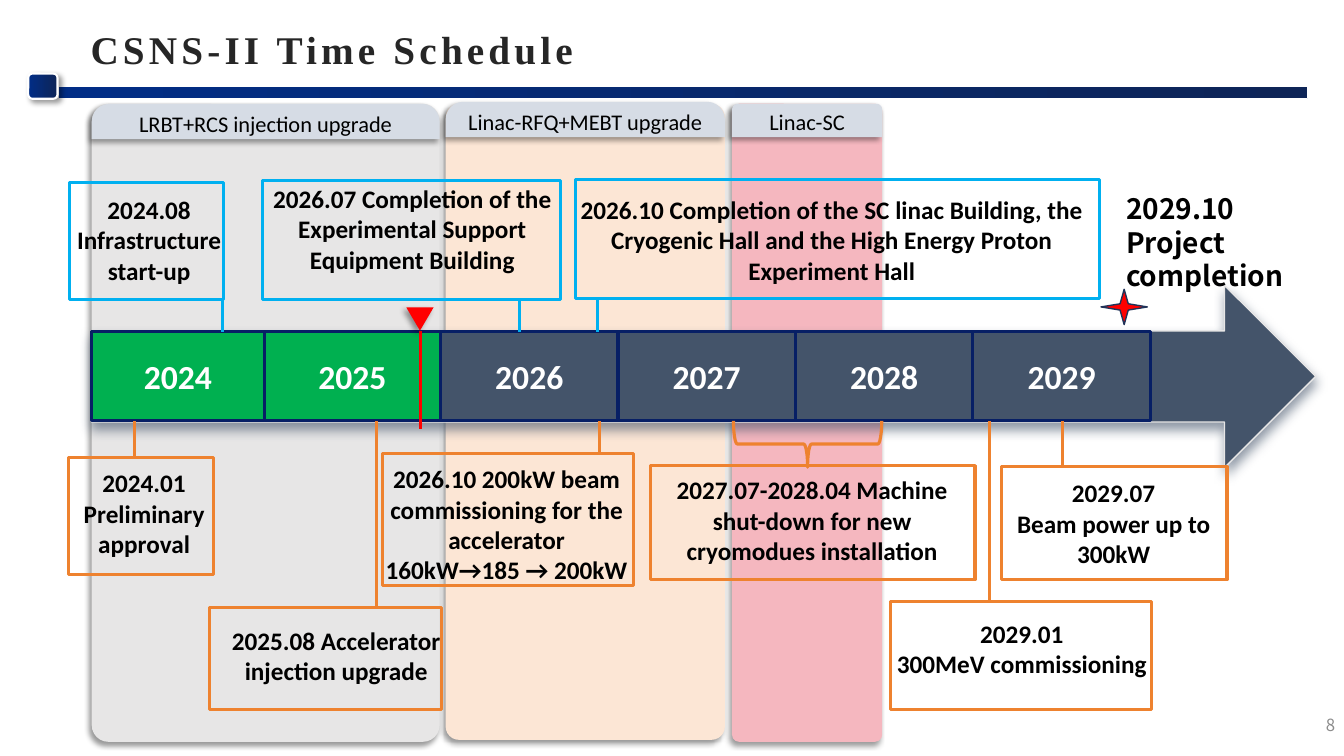
from itertools import pairwise

from lxml.etree import SubElement
from pptx import Presentation
from pptx.dml.color import RGBColor
from pptx.enum.shapes import MSO_CONNECTOR, MSO_SHAPE as SHAPE
from pptx.enum.text import MSO_ANCHOR as ANCHOR, PP_ALIGN as ALIGN
from pptx.oxml.ns import qn
from pptx.util import Pt

PX = 9144  # 100 px to the inch
COLORS = {
    "white": "FFFFFF", "black": "000000", "red": "FF0000", "title": "262626",
    "number": "8C8C8C", "bar_start": "012D86", "bar_end": "0E2557",
    "gray_band": "E7E6E6", "peach_band": "FCE6D5", "pink_band": "F5B7BF",
    "header": "D6DCE5", "slate": "44546A", "done": "00B050", "navy": "071F65",
    "star_edge": "203359", "building": "00B0F0", "machine": "EE822F",
}
SANS, CJK, SERIF = "Calibri", "Noto Sans CJK SC", "Times New Roman"
TIMELINE_TOP, TIMELINE_BOTTOM = 329, 417
YEAR_EDGES = [91, 262, *range(437, 1142, 176)]
FIRST_YEAR, YEARS_DONE = 2024, 2

BANDS = [  # box, fill, header top, header height, header rounding, label
    ((726, 103, 149, 633), "pink_band", 103, 33, 0.172, "Linac-SC"),
    ((442, 103, 277, 631), "peach_band", 101, 35, 0.5, "Linac-RFQ+MEBT upgrade"),
    ((91, 103, 345, 633), "gray_band", 103, 35, 0.5, "LRBT+RCS injection upgrade"),
]
MILESTONES = [  # colour, box, caption (dx, dy, width), lead dx, lines
    ("building", (69, 181, 153, 116), (-18, 7, 194), 152,
     ["2024.08", "Infrastructure start-up"]),
    ("building", (260, 179, 296, 118), (-9, -2, 316), 255,
     ["2026.07 Completion of the Experimental Support Equipment Building"]),
    ("building", (571, 178, 520, 118), (-13, 10, 534), 22,
     ["2026.10 Completion of the SC linac Building, the Cryogenic Hall "
      "and the High Energy Proton Experiment Hall"]),
    ("machine", (68, 454, 144, 116), (-5, 5, 160), 65,
     ["2024.01", "Preliminary approval"]),
    ("machine", (208, 603, 230, 101), (6, 12, 239), 165,
     ["2025.08 Accelerator injection upgrade"]),
    ("machine", (379, 450, 249, 131), (-17, 5, 281), 216,
     ["2026.10 200kW beam commissioning for the accelerator",
      "160kW→185 → 200kW"]),
    ("machine", (645, 462, 322, 113), (-3, 4, 327), None,
     ["2027.07-2028.04 Machine shut-down for new cryomodues installation"]),
    ("machine", (883, 597, 259, 107), (-10, 11, 281), 98,
     ["2029.01", "300MeV commissioning"]),
    ("machine", (993, 463, 224, 112), (-8, 6, 239), 61,
     ["2029.07", "Beam power up to 300kW"]),
]


def rgb(name):
    return RGBColor.from_string(COLORS[name])


def scaled(*lengths):
    return [length * PX for length in lengths]


def cast_shadow(shape, color="black", alpha=40, blur=4, distance=3, angle=135):
    effects = SubElement(shape._element.spPr, qn("a:effectLst"))
    shadow = SubElement(effects, qn("a:outerShdw"), blurRad=str(Pt(blur)),
                        dist=str(Pt(distance)), dir=str(angle * 60000),
                        algn="ctr", rotWithShape="0")
    tint = SubElement(shadow, qn("a:srgbClr"), val=COLORS[color])
    SubElement(tint, qn("a:alpha"), val=str(alpha * 1000))


def add_figure(slide, kind, box, fill=None, line=None, width=2.25, shadow=None):
    """Add a preset shape; shadow holds options for cast_shadow."""
    figure = slide.shapes.add_shape(kind, *scaled(*box))
    if fill:
        figure.fill.solid()
        figure.fill.fore_color.rgb = rgb(fill)
    else:
        figure.fill.background()
    if line:
        figure.line.color.rgb = rgb(line)
        figure.line.width = Pt(width)
    else:
        figure.line.fill.background()
    if shadow is None:
        figure.shadow.inherit = False
    else:
        cast_shadow(figure, **shadow)
    return figure


def add_line(slide, x, top, bottom, color):
    lead = slide.shapes.add_connector(MSO_CONNECTOR.STRAIGHT,
                                      *scaled(x, top, x, bottom))
    lead.line.color.rgb = rgb(color)
    lead.line.width = Pt(2.25)
    SubElement(lead._element.spPr, qn("a:effectLst"))


def write(holder, lines, size, font=SANS, color="black", bold=True,
          align=ALIGN.CENTER, anchor=ANCHOR.MIDDLE, spacing=None):
    frame = holder.text_frame
    frame.word_wrap = True
    frame.vertical_anchor = anchor
    frame.text = "\n".join(lines)
    for paragraph in frame.paragraphs:
        paragraph.alignment = align
        paragraph.line_spacing = spacing
        for run in paragraph.runs:
            run.font.name, run.font.size, run.font.bold = font, Pt(size), bold
            run.font.color.rgb = rgb(color)


def add_text(slide, box, lines, size, **style):
    holder = slide.shapes.add_textbox(*scaled(*box))
    write(holder, lines, size, **style)
    return holder


def add_frame(slide, box):
    """Title, rule with its knob, and page number."""
    left, top, width, height = box
    rule = add_figure(slide, SHAPE.RECTANGLE, (left + 58, top + 86, 1239, 12),
                      line="white", width=1)
    knob = add_figure(slide, SHAPE.ROUNDED_RECTANGLE, (left + 28, top + 73, 29, 25),
                      line="white", width=1.5, shadow={"angle": 45})
    for part in (rule, knob):
        part.fill.gradient()
        part.fill.gradient_angle = 0
        for stop, color in zip(part.fill.gradient_stops, ("bar_start", "bar_end")):
            stop.color.rgb = rgb(color)
    title = add_text(slide, (left + 80, top + 17, 1053, 63),
                     ["CSNS-II Time Schedule"], 28, font=SERIF, color="title",
                     align=ALIGN.LEFT)
    title.text_frame.paragraphs[0].runs[0]._r.get_or_add_rPr().set("spc", "300")
    add_text(slide, (left + width - 40, top + height - 46, 41, 35), ["8"], 12,
             font=CJK, color="number", bold=False, align=ALIGN.RIGHT,
             anchor=ANCHOR.TOP)


def add_band(slide, box, fill, header_top, header_height, rounding, label):
    left, _, width, _ = box
    band = add_figure(slide, SHAPE.ROUNDED_RECTANGLE, box, fill, shadow={})
    band.adjustments[0] = 0.048
    header = add_figure(slide, SHAPE.ROUND_2_SAME_RECTANGLE,
                        (left, header_top, width, header_height), "header",
                        shadow={})
    header.adjustments[0] = rounding
    header.adjustments[1] = 0
    write(header, [label], 16, bold=False)


def add_timeline(slide, box):
    """Arrow with one cell per year and the marker of the present day."""
    left, top, _, _ = box
    add_figure(slide, SHAPE.RIGHT_ARROW, box, "slate", "gray_band", 1,
               {"color": "slate", "alpha": 60, "blur": 8, "distance": 4, "angle": 90})
    for index, (start, end) in enumerate(pairwise(YEAR_EDGES)):
        cell = (start, TIMELINE_TOP, end - start, TIMELINE_BOTTOM - TIMELINE_TOP)
        year = add_figure(slide, SHAPE.RECTANGLE, cell,
                          "done" if index < YEARS_DONE else "slate", "navy")
        write(year, [str(FIRST_YEAR + index)], 24, color="white")
    add_line(slide, left + 326, top + 45, top + 143, "red")
    today = add_figure(slide, SHAPE.ISOSCELES_TRIANGLE,
                       (left + 312, top + 22, 27, 23), "red", shadow={})
    today.rotation = 180


def add_milestone(slide, color, box, caption, lead_dx, lines):
    """Outlined box with its caption and a lead to the timeline."""
    left, top, width, height = box
    dx, dy, caption_width = caption
    add_figure(slide, SHAPE.RECTANGLE, box, line=color)
    add_text(slide, (left + dx, top + dy, caption_width, 101), lines, 18,
             anchor=ANCHOR.TOP)
    if lead_dx is not None:
        ends = ((top + height, TIMELINE_TOP) if top < TIMELINE_TOP
                else (TIMELINE_BOTTOM + 1, top))
        add_line(slide, left + lead_dx, *ends, color)


def add_completion(slide, box):
    left, top, width, _ = box
    add_figure(slide, SHAPE.STAR_4_POINT, (left - 15, top + 102, 46, 35), "red",
               "star_edge", 1)
    add_text(slide, (left, top, width, 111), ["2029.10", "Project completion"], 20,
             font=CJK, align=ALIGN.LEFT, anchor=ANCHOR.TOP, spacing=Pt(24))


def add_shutdown_brace(slide, box):
    brace = add_figure(slide, SHAPE.LEFT_BRACE, box, line="machine")
    brace.rotation = 270


def main():
    deck = Presentation()
    deck.slide_width, deck.slide_height = scaled(1333, 750)
    slide = deck.slides.add_slide(deck.slide_layouts[6])
    add_frame(slide, (0, 0, 1333, 750))
    for band in BANDS:
        add_band(slide, *band)
    add_timeline(slide, (91, 283, 1214, 181))
    for milestone in MILESTONES:
        add_milestone(slide, *milestone)
    add_shutdown_brace(slide, (778, 367, 46, 147))
    add_completion(slide, (1107, 185, 200, 137))
    deck.save("out.pptx")


if __name__ == "__main__":
    main()
